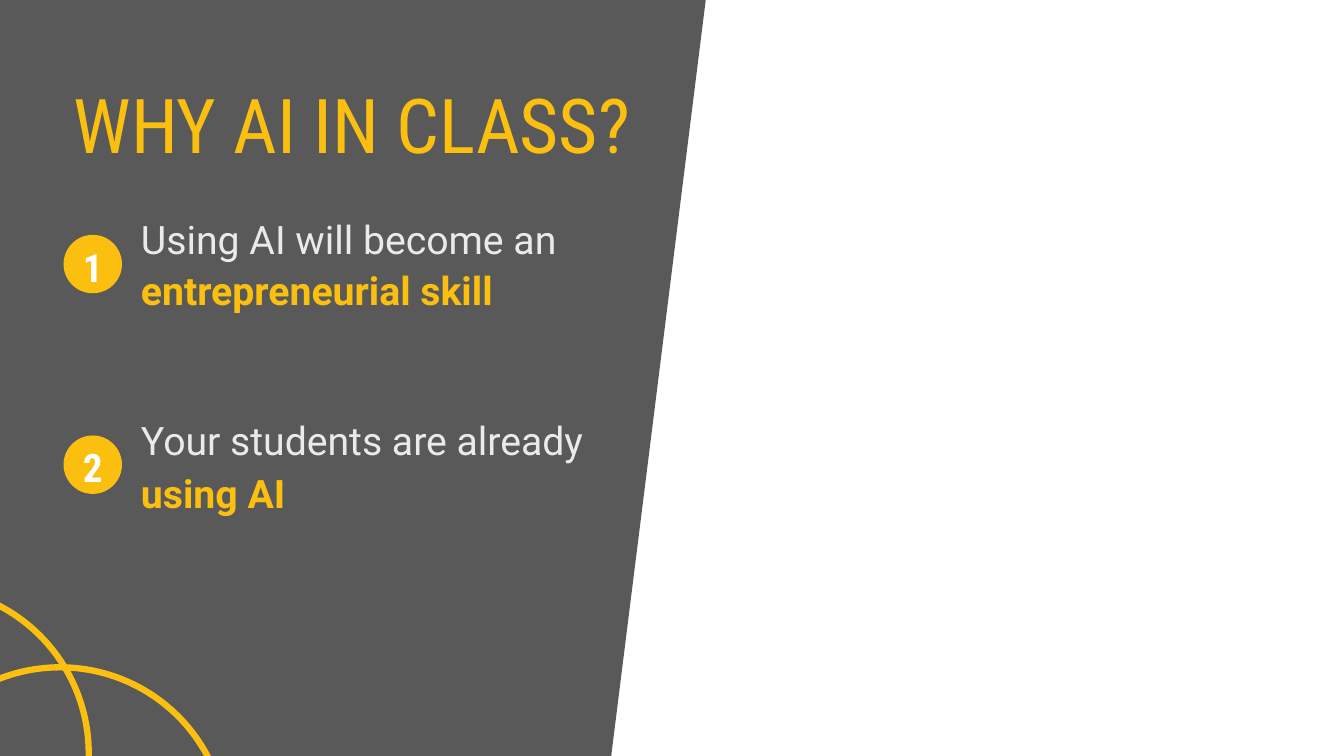
from pptx import Presentation
from pptx import util as u
from pptx.dml.color import RGBColor
from pptx.enum import shapes, text

WIDTH, HEIGHT = 13.33, 7.5
MARGIN = 0.63
TITLE_ONLY = 5
COLORS = {"panel": "595959", "accent": "FBBF10", "body": "E9EAEA", "number": "FFFFFF"}
STYLES = {
    "title": {"name": "Roboto Condensed", "size": u.Pt(54), "bold": False},
    "number": {"name": "Roboto Condensed", "size": u.Pt(28), "bold": True},
    "body": {"name": "Roboto", "size": u.Pt(28), "bold": False},
    "strong": {"name": "Roboto", "size": u.Pt(28), "bold": True},
}
FRAME = {"word_wrap": True, "auto_size": text.MSO_AUTO_SIZE.NONE,
         "vertical_anchor": text.MSO_ANCHOR.TOP}
# Top of the item, plain line, highlighted line, gap between the lines in points
REASONS = [
    (2.09, "Using AI will become an", "entrepreneurial skill", 2.5),
    (4.08, "Your students are already", "using AI", 4.5),
]
RINGS = [(-2.43, 5.82), (-1.06, 6.62)]
RING_SIZE = 3.31


def inches(*lengths):
    return [u.Inches(length) for length in lengths]


def color(name):
    return RGBColor.from_string(COLORS[name])


def set_all(target, values):
    for key, value in values.items():
        setattr(target, key, value)


def write(para, words, style, shade, align=text.PP_ALIGN.LEFT):
    para.alignment = align
    span = para.add_run()
    span.text = words
    set_all(span.font, STYLES[style])
    span.font.color.rgb = color(shade)


def add_panel(page, top_width, bottom_width):
    """Draw the full-height panel with a slanted right edge."""
    builder = page.shapes.build_freeform(0, 0, scale=u.Inches(1))
    builder.add_line_segments([(top_width, 0), (bottom_width, HEIGHT), (0, HEIGHT)])
    panel = builder.convert_to_shape()
    panel.shadow.inherit = False
    panel.fill.solid()
    panel.fill.fore_color.rgb = color("panel")
    panel.line.fill.background()
    return panel


def add_circle(page, left, top, size):
    circle = page.shapes.add_shape(shapes.MSO_SHAPE.OVAL, *inches(left, top, size, size))
    circle.shadow.inherit = False
    return circle


def add_ring(page, left, top):
    ring = add_circle(page, left, top, RING_SIZE)
    ring.fill.background()
    ring.line.color.rgb = color("accent")
    ring.line.width = u.Pt(4.5)


def place_title(page, left, top, width, height):
    title = page.shapes.title
    title.left, title.top, title.width, title.height = inches(left, top, width, height)
    set_all(title.text_frame, FRAME)
    write(title.text_frame.paragraphs[0], "WHY AI IN CLASS?", "title", "accent")
    return title


def add_badge(page, left, top, number):
    badge = add_circle(page, left, top, 0.58)
    badge.fill.solid()
    badge.fill.fore_color.rgb = color("accent")
    badge.line.fill.background()
    frame = badge.text_frame
    set_all(frame, {"margin_left": 0, "margin_right": 0, "margin_bottom": 0,
                    "margin_top": u.Inches(0.05), "word_wrap": False,
                    "vertical_anchor": text.MSO_ANCHOR.MIDDLE})
    write(frame.paragraphs[0], str(number), "number", "number", text.PP_ALIGN.CENTER)


def add_reason(page, left, top, number, plain, strong, gap):
    add_badge(page, left, top + 0.24, number)
    box = page.shapes.add_textbox(*inches(left + 0.67, top, 5.08, 1.07))
    frame = box.text_frame
    set_all(frame, FRAME)
    write(frame.paragraphs[0], plain, "body", "body")
    highlight = frame.add_paragraph()
    highlight.space_before = u.Pt(gap)
    write(highlight, strong, "strong", "accent")


def main():
    deck = Presentation()
    deck.slide_width, deck.slide_height = inches(WIDTH, HEIGHT)
    page = deck.slides.add_slide(deck.slide_layouts[TITLE_ONLY])
    panel = add_panel(page, 6.94, 6.06)
    title = place_title(page, MARGIN, 0.72, 5.75, 1.01)
    panel.element.addnext(title.element)
    for left, top in RINGS:
        add_ring(page, left, top)
    for number, (top, plain, strong, gap) in enumerate(REASONS, start=1):
        add_reason(page, MARGIN, top, number, plain, strong, gap)
    deck.save("out.pptx")


if __name__ == "__main__":
    main()
